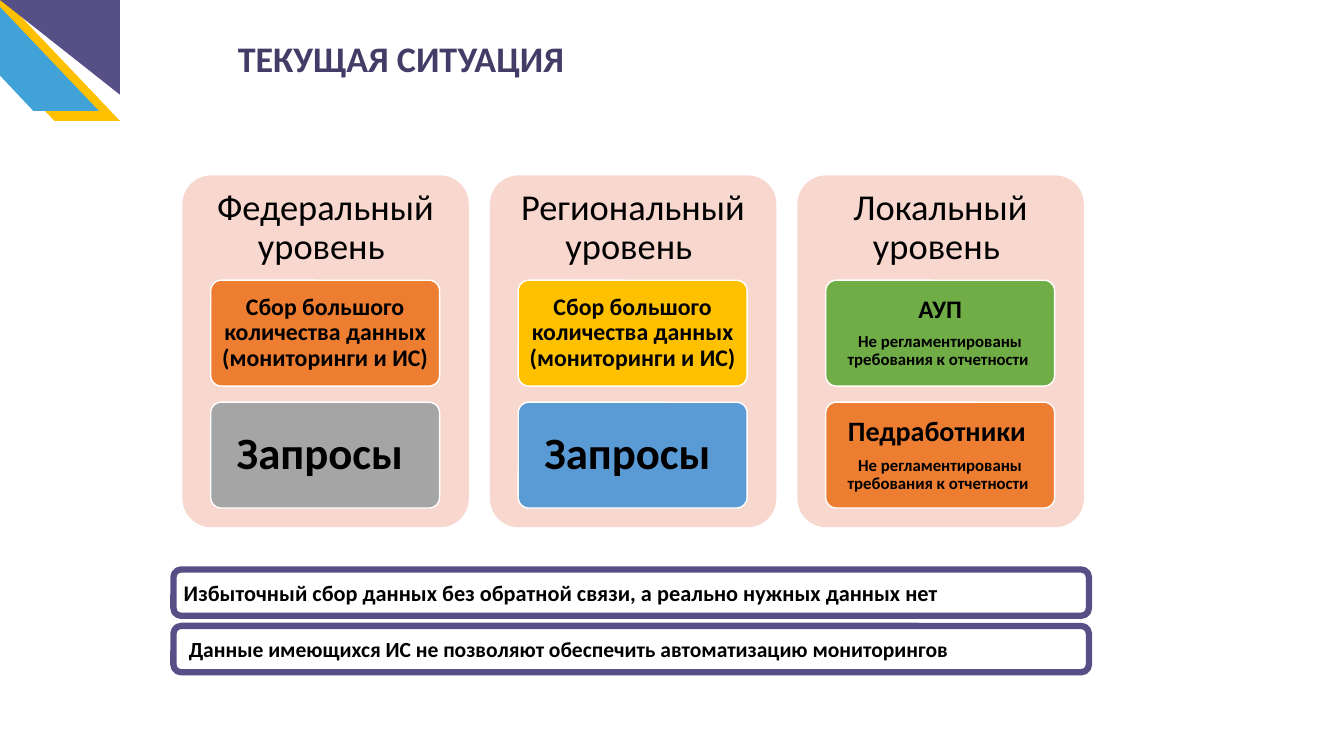
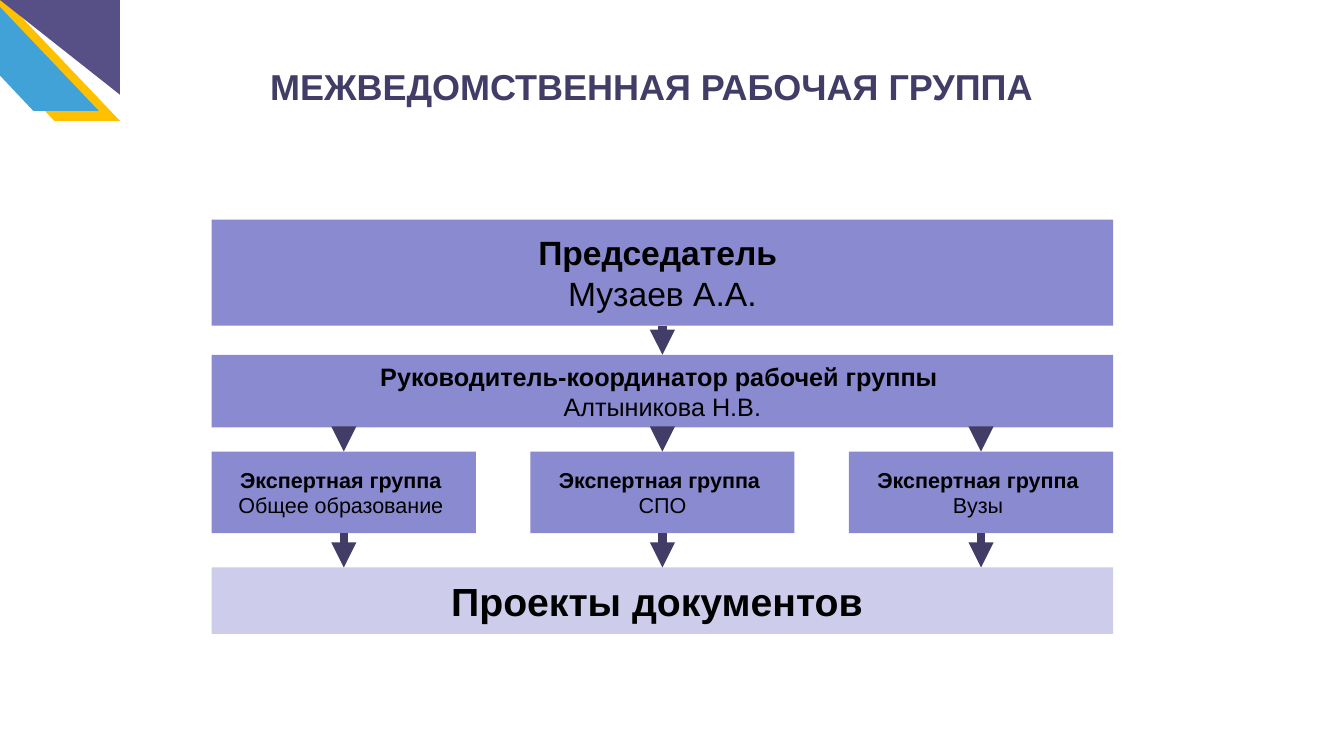
from lxml import etree
from pptx import Presentation
from pptx import util as u
from pptx.dml.color import RGBColor
from pptx.enum import shapes, text
from pptx.oxml.ns import qn

PX = 9144  # 100 px to the inch

INK, BLACK, WHITE = "423D67", "000000", "FFFFFF"
PURPLE, YELLOW, BLUE = "565087", "FFC000", "41A2D8"
PANEL, ORANGE, GRAY, SKY, GREEN = "F8D7CE", "ED7D31", "A5A5A5", "5B9BD5", "70AD47"
LILAC, PALE_LILAC = "8A8AD0", "CDCDEB"

RECT = shapes.MSO_SHAPE.RECTANGLE
ROUNDED = shapes.MSO_SHAPE.ROUNDED_RECTANGLE
TOP, BOTTOM = 0, 2


def px(*lengths):
    return [u.Emu(length * PX) for length in lengths]


def color(hex_string):
    return RGBColor.from_string(hex_string)


def write_text(shape, paragraphs, font="Calibri", fill=BLACK, align="CENTER",
               anchor="MIDDLE", insets=(10, 5, 10, 5), line=1.0, after=0.0):
    """Each paragraph is (text, size, bold); after is a share of its size."""
    frame = shape.text_frame
    frame.word_wrap = True
    frame.vertical_anchor = getattr(text.MSO_ANCHOR, anchor)
    (frame.margin_left, frame.margin_top,
     frame.margin_right, frame.margin_bottom) = px(*insets)
    for index, (words, size, bold) in enumerate(paragraphs):
        paragraph = frame.add_paragraph() if index else frame.paragraphs[0]
        paragraph.alignment = getattr(text.PP_ALIGN, align)
        paragraph.line_spacing = line
        paragraph.space_after = u.Pt(round(size * after))
        run = paragraph.add_run()
        run.text = words
        run.font.name, run.font.size, run.font.bold = font, u.Pt(size), bold
        run.font.color.rgb = color(fill)


def paint(shape, fill=None, line=None, width=1):
    shape.shadow.inherit = False
    if fill:
        shape.fill.solid()
        shape.fill.fore_color.rgb = color(fill)
    else:
        shape.fill.background()
    if line:
        shape.line.color.rgb = color(line)
        shape.line.width = u.Pt(width)
    else:
        shape.line.fill.background()


def add_box(slide, kind, box, radius=None, **style):
    shape = slide.shapes.add_shape(kind, *px(*box))
    if radius is not None:
        shape.adjustments[0] = radius
    paint(shape, **style)
    return shape


def add_label(slide, box, paragraphs, **text_format):
    write_text(slide.shapes.add_textbox(*px(*box)), paragraphs, **text_format)


def add_polygon(slide, fill, points):
    builder = slide.shapes.build_freeform(*points[0], scale=PX)
    builder.add_line_segments(points[1:])
    paint(builder.convert_to_shape(), fill)


def add_arrow(slide, start, end, source=None, target=None):
    arrow = slide.shapes.add_connector(
        shapes.MSO_CONNECTOR.STRAIGHT, *px(*start, *end))
    if source is not None:
        arrow.begin_connect(source, BOTTOM)
    if target is not None:
        arrow.end_connect(target, TOP)
    arrow.line.color.rgb = color(INK)
    arrow.line.width = u.Pt(6)
    etree.SubElement(arrow.line._get_or_add_ln(), qn("a:tailEnd"), type="triangle")
    etree.SubElement(arrow._element.spPr, qn("a:effectLst"))


def start_slide(presentation, title, left, top, font):
    """Blank slide with the corner ornament and the title."""
    slide = presentation.slides.add_slide(presentation.slide_layouts[6])
    add_polygon(slide, YELLOW, [(0, 0), (5, 0), (119, 120), (54, 120), (0, 63)])
    add_polygon(slide, BLUE, [(0, 7), (98, 110), (33, 110), (0, 75)])
    add_polygon(slide, PURPLE, [(0, 0), (119, 0), (119, 94)])
    add_label(slide, (left, top, 790, 53), [(title, 25.7, True)], font=font,
              fill=INK, align="LEFT", anchor="TOP", insets=(0, 5, 0, 5))
    return slide


def build_situation(presentation):
    slide = start_slide(presentation, "ТЕКУЩАЯ СИТУАЦИЯ", 236, 31, "Calibri")
    collection = [("Сбор большого количества данных (мониторинги и ИС)", 17, True)]
    requests = [("Запросы ", 32, True)]
    unregulated = ("Не регламентированы требования к отчетности ", 12, True)
    levels = [
        ("Федеральный уровень ", [(ORANGE, collection), (GRAY, requests)]),
        ("Региональный уровень ", [(YELLOW, collection), (SKY, requests)]),
        ("Локальный уровень ", [
            (GREEN, [("АУП", 18, True), unregulated]),
            (ORANGE, [("Педработники ", 20, True), unregulated])]),
    ]

    # Level panels with two cards each
    for column, (level, cards) in enumerate(levels):
        left = 181 + 305 * column
        add_box(slide, ROUNDED, (left, 174, 284, 349), 0.1, fill=PANEL)
        add_label(slide, (left, 174, 284, 105), [(level, 26, False)],
                  insets=(11, 11, 11, 11), line=0.9, after=0.35)
        for row, (fill, paragraphs) in enumerate(cards):
            card = add_box(slide, ROUNDED, (left + 28, 278 + 121 * row, 227, 105),
                           0.1, fill=fill, line=WHITE)
            write_text(card, paragraphs, insets=(4, 3, 4, 3), line=0.9, after=0.35)

    # Framed conclusions
    conclusions = [
        ("Избыточный сбор данных без обратной связи, а реально нужных данных нет",
         15.9, 8),
        ("Данные имеющихся ИС не позволяют обеспечить автоматизацию мониторингов",
         15.4, 13),
    ]
    for row, (words, size, indent) in enumerate(conclusions):
        frame = add_box(slide, ROUNDED, (172, 565 + 56 * row, 908, 46),
                        line=PURPLE, width=4.5)
        write_text(frame, [(words, size, True)], align="LEFT",
                   insets=(indent, 0, 5, 0))


def build_group(presentation):
    slide = start_slide(presentation, "МЕЖВЕДОМСТВЕННАЯ РАБОЧАЯ ГРУППА",
                        268, 59, "Arial")
    left, width = 210, 894

    def add_unit(box, paragraphs, fill=LILAC):
        unit = add_box(slide, RECT, box, fill=fill)
        write_text(unit, paragraphs, font="Arial")
        return unit

    # Full-width levels
    chairman = add_unit((left, 218, width, 105),
                        [("Председатель ", 24, True), ("Музаев А.А.", 24, False)])
    coordinator = add_unit((left, 352, width, 72),
                           [("Руководитель-координатор рабочей группы ", 18, True),
                            ("Алтыникова Н.В.", 18, False)])
    documents = add_unit((left, 563, width, 66),
                         [("Проекты документов ", 28, True)], PALE_LILAC)
    center = left + width // 2
    add_arrow(slide, (center, 323), (center, 352), chairman, coordinator)

    # Expert groups, with arrows in and out
    for column, field in enumerate(["Общее образование ", "СПО", "Вузы "]):
        group_left = left + 316 * column
        group = add_unit((group_left, 448, 262, 81),
                         [("Экспертная группа ", 15.4, True), (field, 15.4, False)])
        middle = group_left + 131
        is_central = middle == center
        add_arrow(slide, (middle, 424), (middle, 448),
                  coordinator if is_central else None, group)
        add_arrow(slide, (middle, 529), (middle, 563),
                  group, documents if is_central else None)


def main():
    presentation = Presentation()
    presentation.slide_width, presentation.slide_height = px(1333, 750)
    build_situation(presentation)
    build_group(presentation)
    presentation.save("out.pptx")


if __name__ == "__main__":
    main()
